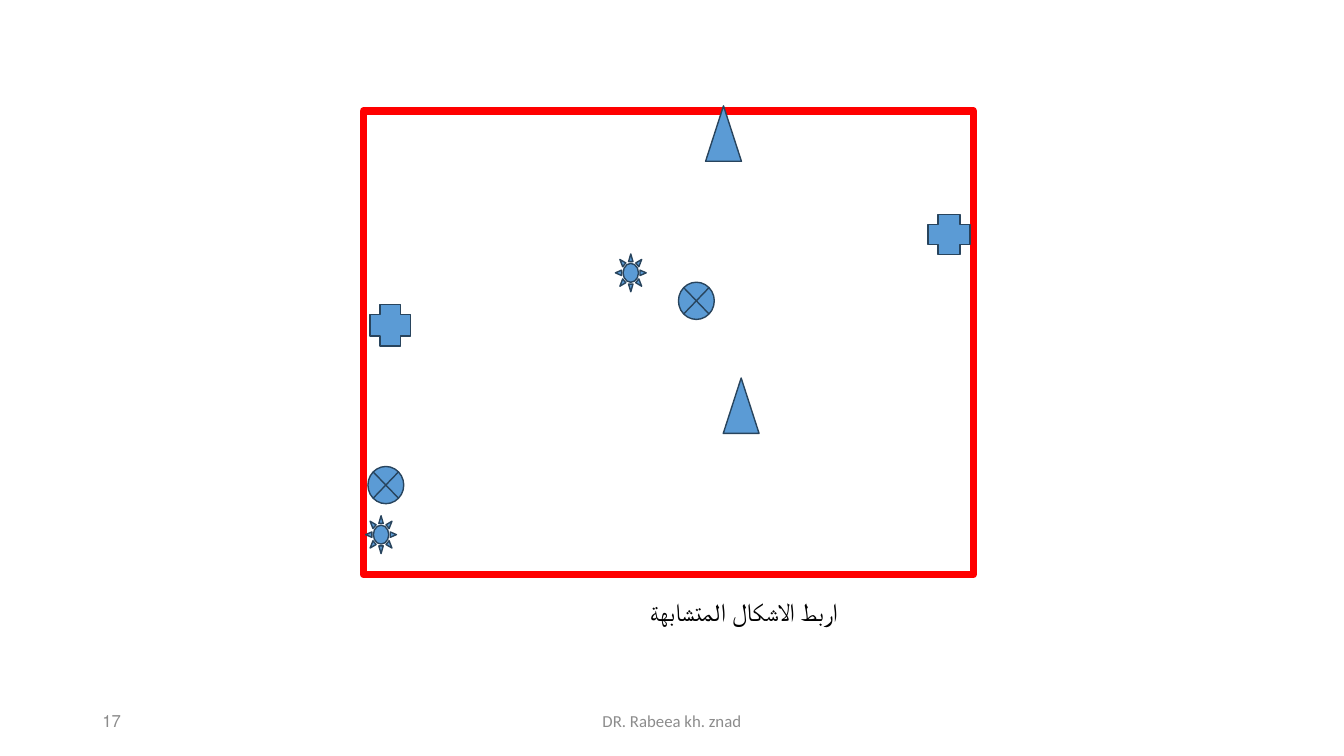
from pptx import Presentation
from pptx.dml.color import RGBColor
from pptx.enum.shapes import MSO_SHAPE
from pptx.enum.text import MSO_ANCHOR, PP_ALIGN
from pptx.util import Pt

RECTANGLE = MSO_SHAPE.RECTANGLE
TRIANGLE = MSO_SHAPE.ISOSCELES_TRIANGLE
PLUS = MSO_SHAPE.CROSS
SUN = MSO_SHAPE.SUN
CROSSED_CIRCLE = MSO_SHAPE.FLOWCHART_SUMMING_JUNCTION
TOP, MIDDLE = MSO_ANCHOR.TOP, MSO_ANCHOR.MIDDLE
LEFT, CENTER, RIGHT = PP_ALIGN.LEFT, PP_ALIGN.CENTER, PP_ALIGN.RIGHT

FONT = "Calibri"
COLORS = {
    "frame": "FF0000",
    "figure": "5B9BD5",
    "outline": "28445D",
    "footer": "8C8C8C",
    "caption": "000000",
}

# Each figure appears twice: kind, left, top, width, height
FIGURES = [
    (TRIANGLE, 504, 75.6, 25.6, 39.6),
    (TRIANGLE, 516.6, 270, 25.6, 39.6),
    (PLUS, 663, 153.4, 29.8, 28.4),
    (PLUS, 264.2, 217.4, 29, 29.8),
    (SUN, 439.6, 181.4, 22, 27),
    (SUN, 261.2, 368.4, 22, 27),
    (CROSSED_CIRCLE, 484.6, 201.6, 25.6, 26.6),
    (CROSSED_CIRCLE, 262.8, 333.2, 25.6, 26.6),
]


def color(name):
    return RGBColor.from_string(COLORS[name])


def add_figure(page, kind, left, top, width, height,
               line="outline", line_width=1, fill="figure"):
    figure = page.shapes.add_shape(kind, Pt(left), Pt(top), Pt(width), Pt(height))
    figure.shadow.inherit = False
    if fill:
        figure.fill.solid()
        figure.fill.fore_color.rgb = color(fill)
    else:
        figure.fill.background()
    figure.line.color.rgb = color(line)
    figure.line.width = Pt(line_width)


def add_text(page, text, left, top, width, height, size, color_name, align, anchor):
    box = page.shapes.add_textbox(Pt(left), Pt(top), Pt(width), Pt(height))
    frame = box.text_frame
    frame.word_wrap = True
    frame.vertical_anchor = anchor
    para = frame.paragraphs[0]
    para.text = text
    para.alignment = align
    para.font.name = FONT
    para.font.size = Pt(size)
    para.font.color.rgb = color(color_name)
    # Right-to-left reading order
    para._p.get_or_add_pPr().set("rtl", "1")


def main():
    deck = Presentation()
    deck.slide_width, deck.slide_height = Pt(960), Pt(540)
    page = deck.slides.add_slide(deck.slide_layouts[6])

    # Footer and page number
    add_text(page, "DR. Rabeea kh. znad", 318, 500.5, 324, 28.75,
             12, "footer", CENTER, MIDDLE)
    add_text(page, "17", 66, 500.5, 216, 28.75, 12, "footer", LEFT, MIDDLE)

    # Red frame with the figures to match
    add_figure(page, RECTANGLE, 259.6, 79.2, 435.6, 331.2,
               line="frame", line_width=5.25, fill=None)
    for figure in FIGURES:
        add_figure(page, *figure)

    # Task caption
    add_text(page, "اربط الاشكال المتشابهة", 306, 422.6, 299.6, 29,
             18, "caption", RIGHT, TOP)

    deck.save("out.pptx")


if __name__ == "__main__":
    main()
